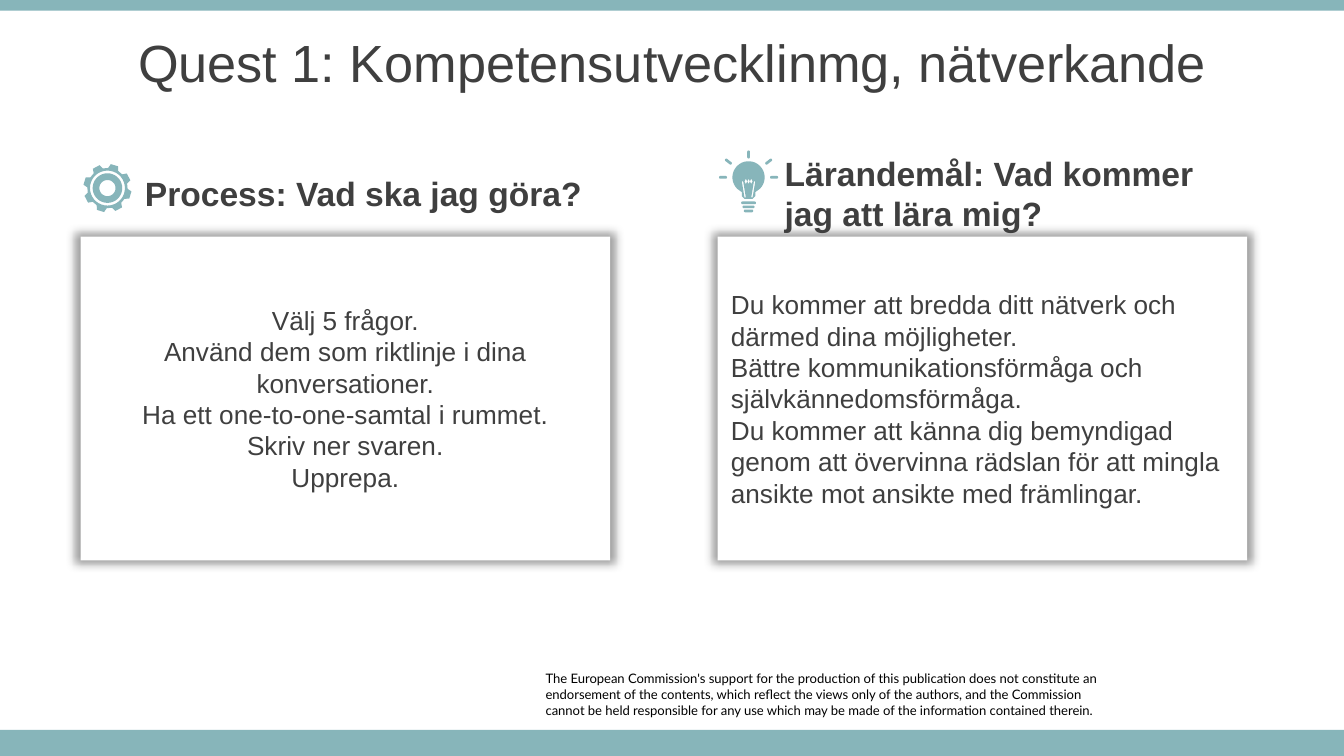
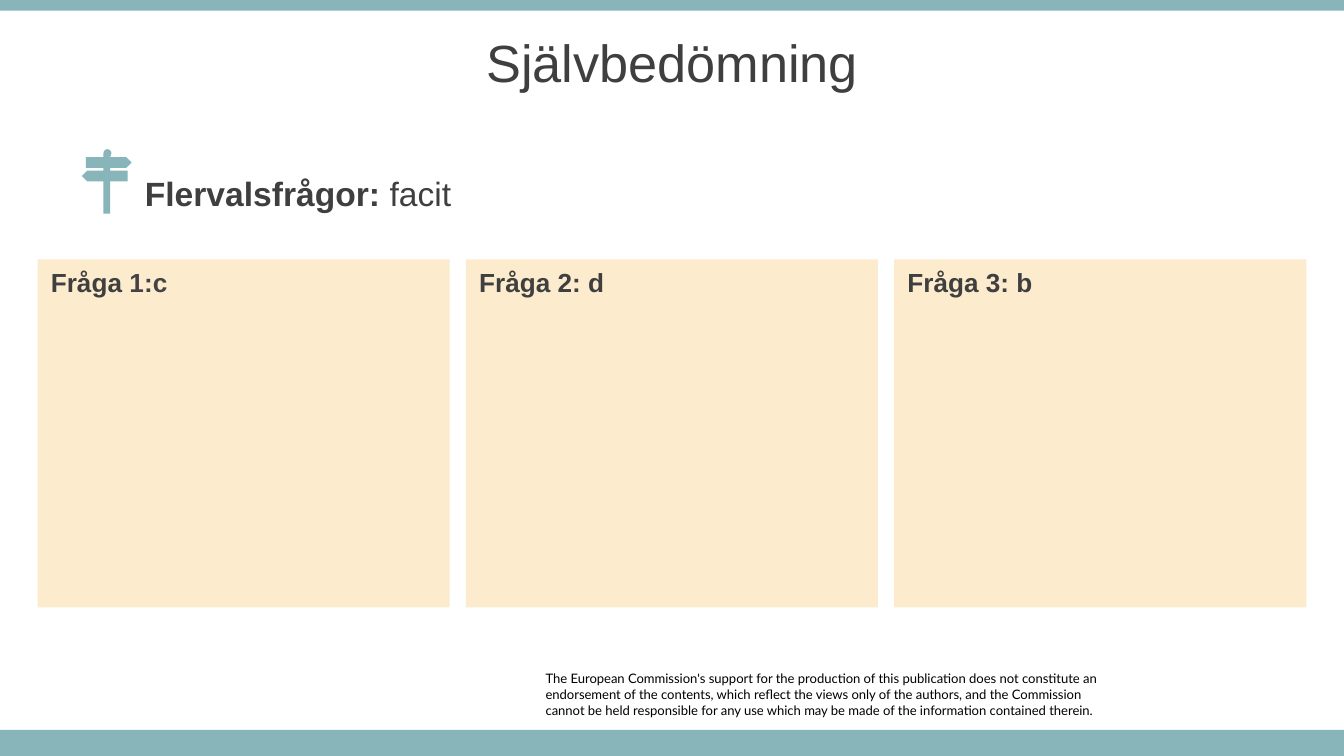
from math import cos, radians, sin

from lxml import etree
from pptx import Presentation
from pptx.dml.color import RGBColor
from pptx.enum.shapes import MSO_SHAPE
from pptx.enum.text import MSO_ANCHOR, PP_ALIGN
from pptx.oxml.ns import qn
from pptx.util import Inches, Pt

RECTANGLE = MSO_SHAPE.RECTANGLE
TOP, MIDDLE = MSO_ANCHOR.TOP, MSO_ANCHOR.MIDDLE
LEFT, CENTER = PP_ALIGN.LEFT, PP_ALIGN.CENTER

COLORS = {
    "teal": "87B5BA",
    "cream": "FCECCD",
    "white": "FFFFFF",
    "text": "3F3F3F",
    "number": "434343",
    "black": "000000",
}
STYLES = {
    "title": {"name": "Arial", "size": Pt(28), "color": "text"},
    "heading": {"name": "Arial", "size": Pt(18), "bold": True, "color": "text"},
    "body": {"name": "Arial", "size": Pt(14), "color": "text"},
    "answer": {"name": "Arial", "size": Pt(14), "bold": True, "color": "text"},
    "footer": {"name": "Lato", "size": Pt(7), "color": "black"},
}
SLIDE_WIDTH = 10
SLIDE_HEIGHT = SLIDE_WIDTH * 9 / 16
DISCLAIMER = [
    "The European Commission's support for the production of this publication "
    "does not constitute an endorsement of the contents, which reflect the views "
    "only of the authors, and the Commission",
    "cannot be held responsible for any use which may be made of the information "
    "contained therein.",
]


def color(name):
    return RGBColor.from_string(COLORS[name])


def format_font(font, values):
    for attribute, value in values.items():
        if attribute == "color":
            font.color.rgb = color(value)
        else:
            setattr(font, attribute, value)


def write(shape, paragraphs, style, align=LEFT, anchor=MIDDLE, margins=(0.1, 0.05)):
    """Fill a shape; a paragraph is a string or a list of (text, overrides) runs."""
    frame = shape.text_frame
    frame.word_wrap = True
    frame.vertical_anchor = anchor
    frame.margin_left = frame.margin_right = Inches(margins[0])
    frame.margin_top = frame.margin_bottom = Inches(margins[1])
    for index, content in enumerate(paragraphs):
        paragraph = frame.add_paragraph() if index else frame.paragraphs[0]
        paragraph.alignment = align
        runs = [(content, {})] if isinstance(content, str) else content
        for text, overrides in runs:
            run = paragraph.add_run()
            run.text = text
            format_font(run.font, STYLES[style] | overrides)


def add_text(slide, box, paragraphs, style, **layout):
    shape = slide.shapes.add_textbox(*map(Inches, box))
    write(shape, paragraphs, style, **layout)


def paint(shape, fill):
    shape.shadow.inherit = False
    shape.fill.solid()
    shape.fill.fore_color.rgb = color(fill)
    shape.line.fill.background()


def add_rectangle(slide, box, fill):
    shape = slide.shapes.add_shape(RECTANGLE, *map(Inches, box))
    paint(shape, fill)
    return shape


def add_glow_shadow(shape):
    """Soft, centred shadow on every side."""
    effects = shape._element.spPr.find(qn("a:effectLst"))
    shadow = etree.SubElement(effects, qn("a:outerShdw"), blurRad=str(Pt(5)), dist="0",
                              sx="102000", sy="102000", algn="ctr", rotWithShape="0")
    tint = etree.SubElement(shadow, qn("a:srgbClr"), val=COLORS["black"])
    etree.SubElement(tint, qn("a:alpha"), val="40000")


def polar(x, y, radius, angle):
    return x + radius * cos(radians(angle)), y + radius * sin(radians(angle))


def arc(x, y, radius, start=0, end=360, step=10):
    return [polar(x, y, radius, angle) for angle in range(start, end + 1, step)]


def capsule(x, y, width, height):
    """Horizontal bar with round ends, centred on x, y."""
    radius, reach = height / 2, (width - height) / 2
    return arc(x + reach, y, radius, -90, 90, 30) + arc(x - reach, y, radius, 90, 270, 30)


def add_icon(slide, left, top, contours):
    """One freeform from contours in inches; inner contours become holes."""
    placed = [[(Inches(left + x), Inches(top + y)) for x, y in contour]
              for contour in contours]
    builder = slide.shapes.build_freeform(*placed[0][0], scale=1.0)
    for index, contour in enumerate(placed):
        if index:
            builder.move_to(*contour[0])
        builder.add_line_segments(contour[1:], close=True)
    paint(builder.convert_to_shape(), "teal")


def add_gear(slide, left, top):
    center = 0.18
    tooth = [(0.15, -15), (0.18, -9), (0.18, 9), (0.15, 15)]
    rim = [polar(center, center, radius, 17 + 45 * index + offset)
           for index in range(8) for radius, offset in tooth]
    rings = [arc(center, center, radius) for radius in (0.13, 0.11, 0.06)]
    add_icon(slide, left, top, [rim] + rings)


def add_bulb(slide, left, top):
    x, y = 0.23, 0.2
    glass = arc(x, y, 0.12, 135, 405) + [
        (x + 0.05, 0.31), (x + 0.05, 0.34), (x + 0.03, 0.36),
        (x - 0.03, 0.36), (x - 0.05, 0.34), (x - 0.05, 0.31)]
    screw = [capsule(x, 0.39 + 0.03 * index, 0.11 - 0.02 * index, 0.02)
             for index in range(3)]
    legs = [[(x + side * offset, height) for offset, height in
             ((0.05, 0.23), (0.04, 0.23), (0.02, 0.35), (0.03, 0.35))]
            for side in (-1, 1)]
    loops = [[(x + offset - 0.01, 0.23), (x + offset, 0.21),
              (x + offset + 0.01, 0.23), (x + offset, 0.25)]
             for offset in (-0.02, 0, 0.02)]
    rays = []
    for angle, start in ((-180, 0.17), (-142, 0.17), (-90, 0.15), (-38, 0.17), (0, 0.17)):
        inner, outer = polar(x, y, start, angle), polar(x, y, start + 0.04, angle)
        rays.append(arc(*outer, 0.01, angle - 90, angle + 90, 30)
                    + arc(*inner, 0.01, angle + 90, angle + 270, 30))
    add_icon(slide, left, top, [glass] + screw + legs + loops + rays)


def add_signpost(slide, left, top):
    post = arc(0.19, 0.03, 0.03, -180, 0, 30)
    right_arm = [(0.21, 0.06), (0.33, 0.06), (0.37, 0.1), (0.33, 0.14), (0.21, 0.14)]
    lower_right = [(0.21, 0.16), (0.34, 0.16), (0.34, 0.24), (0.21, 0.24), (0.21, 0.48)]
    lower_left = [(0.16, 0.48), (0.16, 0.24), (0.04, 0.24), (0, 0.2), (0.04, 0.16),
                  (0.16, 0.16)]
    upper_left = [(0.16, 0.14), (0.03, 0.14), (0.03, 0.06), (0.16, 0.06)]
    add_icon(slide, left, top, [post + right_arm + lower_right + lower_left + upper_left])


def add_base_slide(presentation, title):
    """Slide with the shared bands, disclaimer and title."""
    slide = presentation.slides.add_slide(presentation.slide_layouts[6])
    add_text(slide, (4.06, 4.99, 4.17, 0.35), DISCLAIMER, "footer",
             anchor=TOP, margins=(0, 0))
    add_rectangle(slide, (0, 5.43, SLIDE_WIDTH, SLIDE_HEIGHT - 5.43), "teal")
    add_rectangle(slide, (0, 0, SLIDE_WIDTH, 0.08), "teal")
    add_text(slide, (0, 0.14, SLIDE_WIDTH, 0.63), [title], "title", align=CENTER)
    return slide


def add_panel(slide, box, heading, heading_offset, paragraphs, align):
    left, top, width, _ = box
    panel = add_rectangle(slide, box, "white")
    add_glow_shadow(panel)
    write(panel, paragraphs, "body", align=align)
    add_text(slide, (left + heading_offset, top - 0.48, width - 0.38, 0.31),
             [heading], "heading")


def add_answer_row(slide, box, answers, gap):
    left, top, width, height = box
    card_width = (width - gap * (len(answers) - 1)) / len(answers)
    for index, answer in enumerate(answers):
        card_left = left + index * (card_width + gap)
        card = add_rectangle(slide, (card_left, top, card_width, height), "cream")
        write(card, [answer], "answer", anchor=TOP)


def build_quest_slide(presentation):
    slide = add_base_slide(presentation, "Quest 1: Kompetensutvecklinmg, nätverkande")
    add_gear(slide, 0.62, 1.22)
    add_bulb(slide, 5.34, 1.12)
    add_panel(slide, (0.6, 1.76, 3.94, 2.41), "Process: Vad ska jag göra?", 0.38, [
        "Välj 5 frågor.",
        "Använd dem som riktlinje i dina konversationer.",
        "Ha ett one-to-one-samtal i rummet.",
        "Skriv ner svaren.",
        "Upprepa.",
    ], CENTER)
    add_panel(slide, (5.34, 1.76, 3.94, 2.41),
              "Lärandemål: Vad kommer jag att lära mig?", 0.4, [
        "Du kommer att bredda ditt nätverk och därmed dina möjligheter.",
        "Bättre kommunikationsförmåga och självkännedomsförmåga.",
        "Du kommer att känna dig bemyndigad genom att övervinna rädslan för att "
        "mingla ansikte mot ansikte med främlingar.",
    ], LEFT)


def build_answers_slide(presentation):
    slide = add_base_slide(presentation, "Självbedömning")
    add_text(slide, (0.98, 1.28, 6.69, 0.31),
             [[("Flervalsfrågor: ", {}), ("facit", {"bold": False})]], "heading")
    add_signpost(slide, 0.61, 1.11)
    answers = [[("Fråga", {}), (" 1:c", {"color": "number"})], "Fråga 2: d", "Fråga 3: b"]
    add_answer_row(slide, (0.28, 1.93, 9.44, 2.59), answers, gap=0.12)


def main():
    presentation = Presentation()
    presentation.slide_width = Inches(SLIDE_WIDTH)
    presentation.slide_height = Inches(SLIDE_HEIGHT)
    build_quest_slide(presentation)
    build_answers_slide(presentation)
    presentation.save("out.pptx")


if __name__ == "__main__":
    main()
